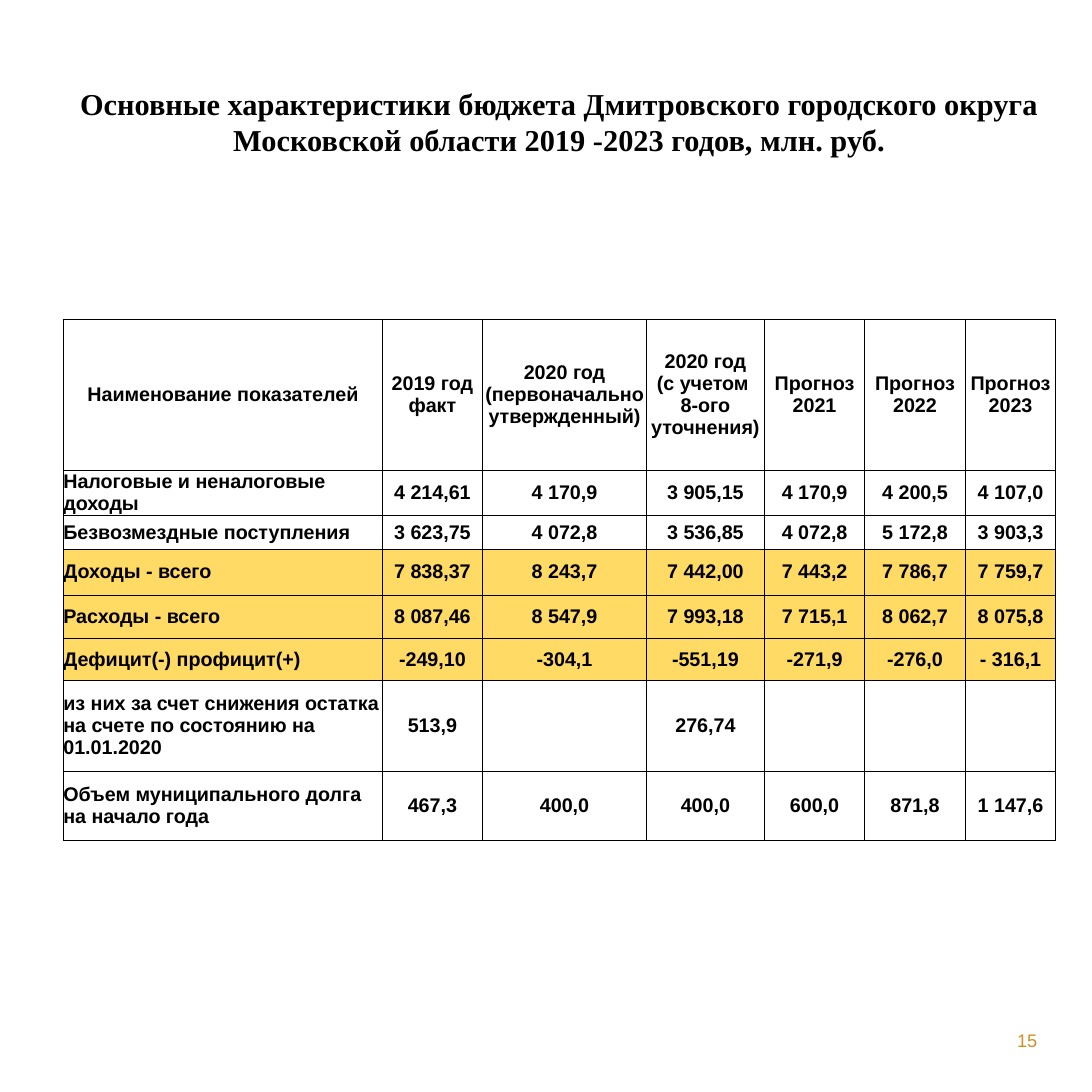
"""Builds the slide with the main figures of the district budget, 2019 to 2023."""
import pptx
import pptx.util
import pptx.dml.color
import pptx.enum.text
import pptx.oxml
import pptx.oxml.ns

Inches, Pt = pptx.util.Inches, pptx.util.Pt
ALIGN = pptx.enum.text.PP_ALIGN
MIDDLE = pptx.enum.text.MSO_ANCHOR.MIDDLE
BLACK = pptx.dml.color.RGBColor(0x00, 0x00, 0x00)
WHITE = pptx.dml.color.RGBColor(0xFF, 0xFF, 0xFF)
GOLD = pptx.dml.color.RGBColor(0xFF, 0xDA, 0x65)
OCHRE = pptx.dml.color.RGBColor(0xD2, 0x8E, 0x27)

deck = pptx.Presentation()
deck.slide_width = deck.slide_height = side = Inches(10)
slide = deck.slides.add_slide(deck.slide_layouts[6])
left, wide = int(side * 0.058), int(side * 0.908)


def write(frame, text, size=13, font="Arial", color=BLACK, bold=True, align=ALIGN.CENTER):
    frame.word_wrap = True
    frame.text = text
    for para in frame.paragraphs:
        para.alignment = align
        for run in para.runs:
            run.font.size = Pt(size)
            run.font.name = font
            run.font.bold = bold
            run.font.color.rgb = color


heads = ["Наименование показателей", "2019 год\nфакт", "2020 год\n(первоначально утвержденный)",
         "2020 год\n(с учетом \n8-ого уточнения)"]
heads += [f"Прогноз\n{year}" for year in (2021, 2022, 2023)]
rows = [
    heads,
    ["Налоговые и неналоговые доходы", "4 214,61", "4 170,9", "3 905,15", "4 170,9", "4 200,5", "4 107,0"],
    ["Безвозмездные поступления", "3 623,75", "4 072,8", "3 536,85", "4 072,8", "5 172,8", "3 903,3"],
    ["Доходы - всего", "7 838,37", "8 243,7", "7 442,00", "7 443,2", "7 786,7", "7 759,7"],
    ["Расходы - всего", "8 087,46", "8 547,9", "7 993,18", "7 715,1", "8 062,7", "8 075,8"],
    ["Дефицит(-) профицит(+)", "-249,10", "-304,1", "-551,19", "-271,9", "-276,0", "- 316,1"],
    ["из них за счет снижения остатка на счете по состоянию на 01.01.2020", "513,9", "", "276,74", "", "", ""],
    ["Объем муниципального долга на начало года", "467,3", "400,0", "400,0", "600,0", "871,8", "1 147,6"],
]
widths = [2.92, 0.92, 1.5, 1.08, 0.92, 0.92, 0.83]
heights = [1.39, 0.41, 0.31, 0.42, 0.4, 0.38, 0.83, 0.64]
totals = (3, 4, 5)

grid = slide.shapes.add_table(len(rows), len(widths), left, int(side * 0.292),
                              wide, Inches(sum(heights))).table
for column, width in zip(grid.columns, widths):
    column.width = Inches(width)
for line, height in zip(grid.rows, heights):
    line.height = Inches(height)

for r, row in enumerate(rows):
    for c, text in enumerate(row):
        cell = grid.cell(r, c)
        cell.margin_left = cell.margin_right = cell.margin_top = cell.margin_bottom = 0
        cell.vertical_anchor = MIDDLE
        write(cell.text_frame, text, align=ALIGN.LEFT if r and not c else ALIGN.CENTER)
        props = cell._tc.get_or_add_tcPr()
        for edge in ("lnL", "lnR", "lnT", "lnB"):
            props.append(pptx.oxml.parse_xml(
                f'<a:{edge} {pptx.oxml.ns.nsdecls("a")} w="{Pt(0.5)}"><a:solidFill>'
                f'<a:srgbClr val="{BLACK}"/></a:solidFill></a:{edge}>'))
        cell.fill.solid()
        cell.fill.fore_color.rgb = GOLD if r in totals else WHITE

title = slide.shapes.add_textbox(left, int(side * 0.073), wide, int(side * 0.077))
write(title.text_frame, "Основные характеристики бюджета Дмитровского городского округа "
      "Московской области 2019 -2023 годов, млн. руб.", size=20, font="Times New Roman")

page = slide.shapes.add_textbox(int(side * 0.717), int(side * 0.943),
                                int(side * 0.233), int(side * 0.02)).text_frame
page.margin_left = page.margin_right = page.margin_top = page.margin_bottom = 0
page.vertical_anchor = MIDDLE
write(page, "15", size=12, color=OCHRE, bold=False, align=ALIGN.RIGHT)

deck.save("out.pptx")
